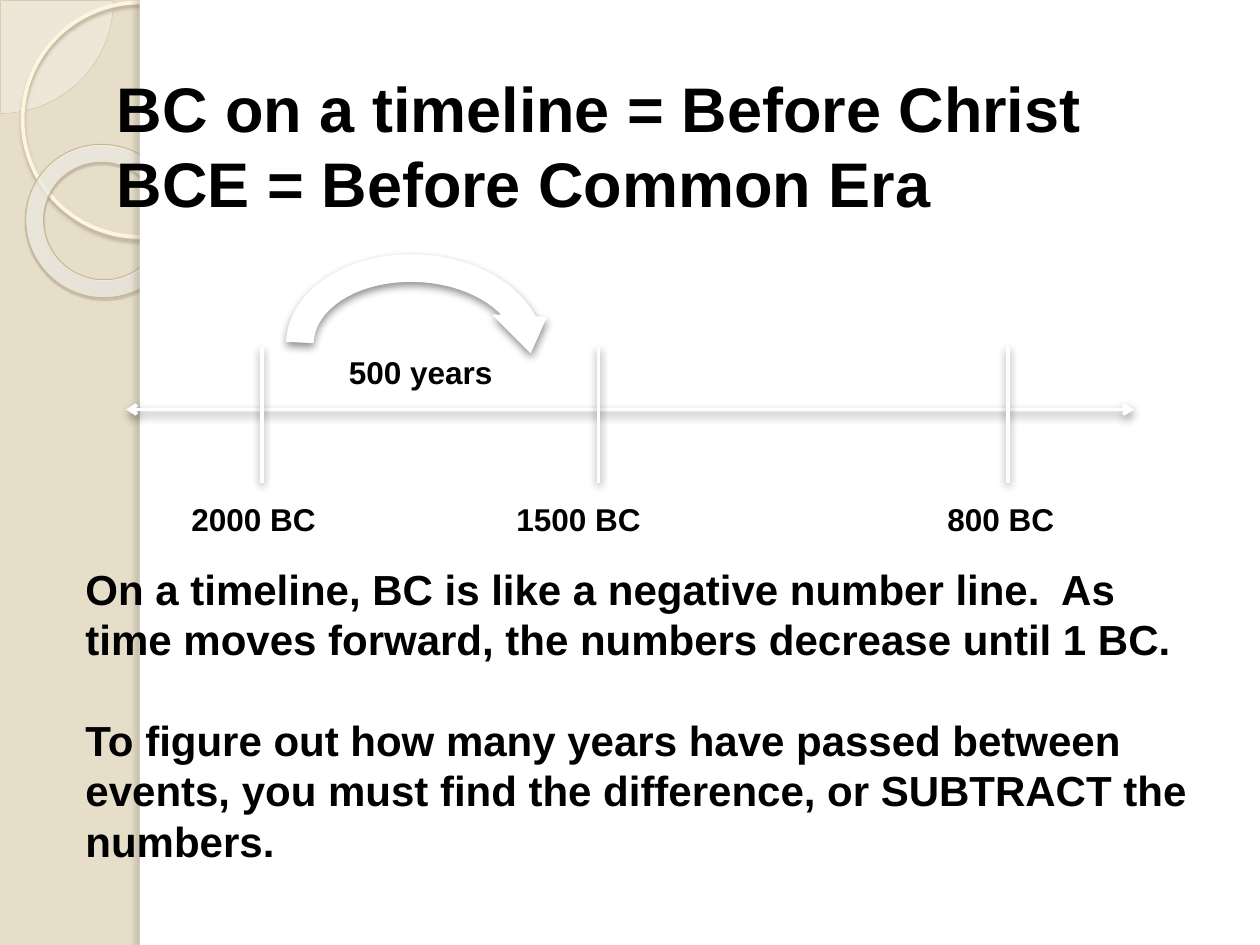
"""Build a slide that explains BC dates on a timeline."""
import lxml.etree
import pptx
import pptx.dml.color
import pptx.enum.shapes
import pptx.enum.text
import pptx.oxml
import pptx.oxml.ns
import pptx.util

Inches = pptx.util.Inches
Pt = pptx.util.Pt
RGBColor = pptx.dml.color.RGBColor
SHAPES = pptx.enum.shapes.MSO_SHAPE
qn = pptx.oxml.ns.qn

COLORS = {
    "sand": "E7DEC9", "white": "FFFFFF", "black": "000000",
    "pie": "FEFAF4", "pie line": "D3C39F",
    "circle line": "FFF5DE", "circle shadow": "B0A68F",
    "ring line": "C7B893", "ring shadow": "5A5444",
    "edge shadow": "736F63",
}
RING_STOPS = [(0, "FFFCF6", 70), (70, "FFFEFB", 55), (100, "F0D28E", 60)]
DARK_SHADOW = ("black", 43, 5, 2, 90)


def style(shape, line=None, width=1, fill=None, shadow=None):
    """Set the line, the fill and the shadow of a shape or connector."""
    if line:
        shape.line.color.rgb = RGBColor.from_string(COLORS[line])
        shape.line.width = Pt(width)
    else:
        shape.line.fill.background()
    if fill:
        shape.fill.solid()
        shape.fill.fore_color.rgb = RGBColor.from_string(COLORS[fill])
    elif not isinstance(shape, pptx.shapes.connector.Connector):
        shape.fill.background()
    effects = lxml.etree.SubElement(shape.element.spPr, qn("a:effectLst"))
    if shadow:
        color, opacity, blur, distance, angle = shadow
        outer = lxml.etree.SubElement(
            effects, qn("a:outerShdw"), blurRad=str(Pt(blur)), dist=str(Pt(distance)),
            dir=str(angle * 60000), algn="ctr", rotWithShape="0")
        value = lxml.etree.SubElement(outer, qn("a:srgbClr"), val=COLORS[color])
        lxml.etree.SubElement(value, qn("a:alpha"), val=str(opacity * 1000))


def add_text(left, top, width, height, size, paragraphs, gap=0):
    """Add a bold black text box with a gap between its paragraphs."""
    box = slide.shapes.add_textbox(Inches(left), Inches(top), Inches(width), Inches(height))
    frame = box.text_frame
    frame.text = "\n".join(paragraphs)
    frame.word_wrap = True
    frame.auto_size = pptx.enum.text.MSO_AUTO_SIZE.SHAPE_TO_FIT_TEXT
    for index, paragraph in enumerate(frame.paragraphs):
        if index:
            paragraph.space_before = Pt(gap)
        font = paragraph.runs[0].font
        font.name = "Arial"
        font.size = Pt(size)
        font.bold = True
        font.color.rgb = RGBColor.from_string(COLORS["black"])


presentation = pptx.Presentation()
presentation.slide_width = Inches(10)
presentation.slide_height = Inches(7.5)
slide = presentation.slides.add_slide(presentation.slide_layouts[6])
slide.background.fill.solid()
slide.background.fill.fore_color.rgb = RGBColor.from_string(COLORS["sand"])

pie = slide.shapes.add_shape(
    SHAPES.PIE, Inches(-0.89), Inches(-0.89), Inches(1.79), Inches(1.79))
pie.adjustments[0] = 0
pie.adjustments[1] = 54
style(pie, "pie line", 0.25, "pie")
pie_color = pie.element.spPr.find(qn("a:solidFill"))[0]
lxml.etree.SubElement(pie_color, qn("a:alpha"), val="33000")

circle = slide.shapes.add_shape(
    SHAPES.OVAL, Inches(0.18), Inches(0.02), Inches(1.86), Inches(1.86))
style(circle, "circle line", 2.15, shadow=("circle shadow", 85, 2, 2, 90))

ring = slide.shapes.add_shape(
    SHAPES.DONUT, Inches(0.2), Inches(1.15), Inches(1.23), Inches(1.21))
ring.adjustments[0] = 0.118
ring.rotation = 38.6
style(ring, "ring line", 0.58, shadow=("ring shadow", 35, 1, 1.2, 75))
gradient = lxml.etree.Element(qn("a:gradFill"), rotWithShape="1")
stops = lxml.etree.SubElement(gradient, qn("a:gsLst"))
for position, color, opacity in RING_STOPS:
    stop = lxml.etree.SubElement(stops, qn("a:gs"), pos=str(position * 1000))
    value = lxml.etree.SubElement(stop, qn("a:srgbClr"), val=color)
    lxml.etree.SubElement(value, qn("a:alpha"), val=str(opacity * 1000))
radial = lxml.etree.SubElement(gradient, qn("a:path"), path="circle")
lxml.etree.SubElement(
    radial, qn("a:fillToRect"), l="-408000", t="-50000", r="508000", b="150000")
ring_properties = ring.element.spPr
ring_properties.replace(ring_properties.find(qn("a:noFill")), gradient)

for width, shadow in [(8.89, None), (0.08, ("edge shadow", 25, 3, 3, 180))]:
    panel = slide.shapes.add_shape(
        SHAPES.RECTANGLE, Inches(1.11), Inches(0), Inches(width), Inches(7.5))
    style(panel, fill="white", shadow=shadow)

timeline = slide.shapes.add_connector(
    pptx.enum.shapes.MSO_CONNECTOR.STRAIGHT, Inches(1), Inches(3.25), Inches(9), Inches(3.25))
style(timeline, "white", 2, shadow=DARK_SHADOW)
for end in ("a:headEnd", "a:tailEnd"):
    lxml.etree.SubElement(timeline.element.spPr.find(qn("a:ln")), qn(end), type="arrow")

add_text(0.83, 0.5, 8.58, 1.31, 36,
         ["BC on a timeline = Before Christ", "BCE = Before Common Era"])

for tick_left, label_left, label in [
        (2.08, 1.42, "2000 BC"), (4.75, 4, "1500 BC"), (8, 7.42, "800 BC")]:
    tick = slide.shapes.add_connector(
        pptx.enum.shapes.MSO_CONNECTOR.STRAIGHT,
        Inches(tick_left), Inches(2.75), Inches(tick_left), Inches(3.83))
    style(tick, "white", 2, shadow=DARK_SHADOW)
    add_text(label_left, 3.92, 1.33, 0.42, 18, [label])

jump = slide.shapes.add_shape(
    SHAPES.CIRCULAR_ARROW, Inches(2.17), Inches(1.92), Inches(2.25), Inches(1.67))
jump.rotation = 2.6
style(jump, "white", 0.75, "white", DARK_SHADOW)
add_text(2.67, 2.75, 1.42, 0.4, 18, ["500 years"])

add_text(0.58, 4.42, 9.08, 2.52, 24, [
    "On a timeline, BC is like a negative number line.  As time moves forward, "
    "the numbers decrease until 1 BC.",
    "To figure out how many years have passed between events, you must find "
    "the difference, or SUBTRACT the numbers.",
], gap=28.8)

presentation.save("out.pptx")
